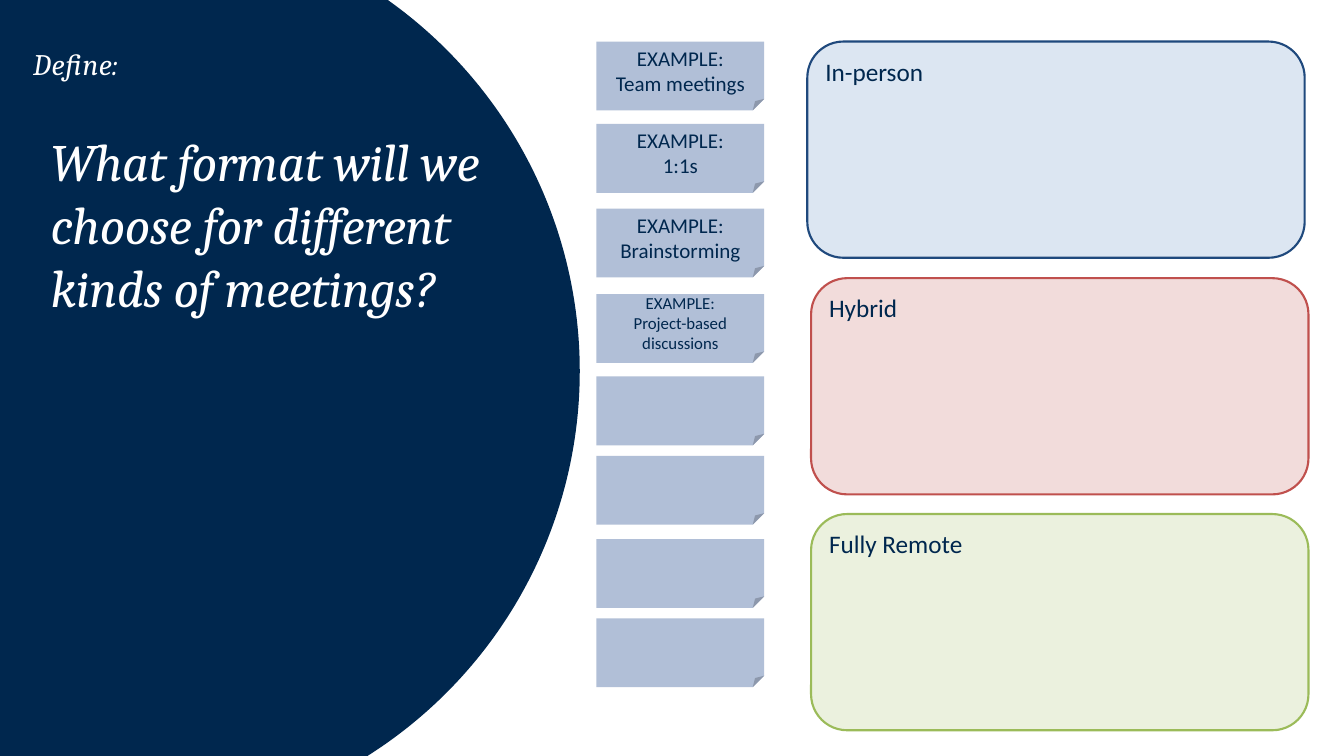
from dataclasses import dataclass

from pptx import Presentation
from pptx.dml.color import RGBColor
from pptx.enum.shapes import MSO_SHAPE
from pptx.enum.text import MSO_ANCHOR, MSO_AUTO_SIZE, PP_ALIGN
from pptx.util import Inches, Pt

NOTE_SHAPE = MSO_SHAPE.FOLDED_CORNER
ZONE_SHAPE = MSO_SHAPE.ROUNDED_RECTANGLE
CIRCLE_SHAPE = MSO_SHAPE.FLOWCHART_CONNECTOR
TOP, MIDDLE = MSO_ANCHOR.TOP, MSO_ANCHOR.MIDDLE
LEFT, CENTER = PP_ALIGN.LEFT, PP_ALIGN.CENTER
FIT_SHAPE = MSO_AUTO_SIZE.SHAPE_TO_FIT_TEXT

NAVY, WHITE, NOTE_BLUE = "00274E", "FFFFFF", "B1BFD7"
SANS, SERIF = "Calibri", "Cambria"
TITLE_ONLY = 5


@dataclass
class Note:
    top: float
    meeting: str = ""
    size: float = 20


@dataclass
class Zone:
    label: str
    left: float
    top: float
    fill: str
    line: str


NOTES = [
    Note(0.55, "Team meetings"),
    Note(1.64, "1:1s"),
    Note(2.76, "Brainstorming"),
    Note(3.89, "Project-based discussions", 16),
    Note(4.98),
    Note(6.03),
    Note(7.13),
    Note(8.18),
]
ZONES = [
    Zone("In-person", 10.68, 0.55, "DCE6F2", "1F497D"),
    Zone("Hybrid", 10.73, 3.68, "F2DCDB", "C0504D"),
    Zone("Fully Remote", 10.73, 6.8, "EBF1DE", "9BBB59"),
]


def color(value: str) -> RGBColor:
    return RGBColor.from_string(value)


def add_span(para, text: str, size: float, font: str, hue: str):
    span = para.add_run()
    span.text = text
    span.font.size = Pt(size)
    span.font.name = font
    span.font.color.rgb = color(hue)
    return span


def add_panel(page, kind, left: float, top: float, width: float, height: float,
              fill: str, line: str = ""):
    panel = page.shapes.add_shape(
        kind, Inches(left), Inches(top), Inches(width), Inches(height))
    panel.shadow.inherit = False
    panel.fill.solid()
    panel.fill.fore_color.rgb = color(fill)
    if line:
        panel.line.color.rgb = color(line)
        panel.line.width = Pt(2)
    else:
        panel.line.fill.background()
    return panel


def add_note(page, note: Note) -> None:
    panel = add_panel(page, NOTE_SHAPE, 7.89, note.top, 2.22, 0.91, NOTE_BLUE)
    if not note.meeting:
        return
    frame = panel.text_frame
    frame.word_wrap = True
    frame.vertical_anchor = MIDDLE
    first, second = frame.paragraphs[0], frame.add_paragraph()
    for para, text in ((first, "EXAMPLE:"), (second, note.meeting)):
        para.alignment = CENTER
        add_span(para, text, note.size, SANS, NAVY)


def add_zone(page, zone: Zone) -> None:
    panel = add_panel(page, ZONE_SHAPE, zone.left, zone.top, 6.58, 2.86,
                      zone.fill, zone.line)
    frame = panel.text_frame
    frame.word_wrap = True
    frame.vertical_anchor = TOP
    para = frame.paragraphs[0]
    para.alignment = LEFT
    add_span(para, zone.label, 24, SANS, NAVY)


def write_heading(box, text: str, size: float, inset: float, spacing: float):
    """Write white italic serif text; spacing is between letters, in points."""
    frame = box.text_frame
    frame.word_wrap = True
    frame.auto_size = FIT_SHAPE
    frame.vertical_anchor = TOP
    frame.margin_left = frame.margin_right = frame.margin_bottom = 0
    frame.margin_top = Inches(inset)
    para = frame.paragraphs[0]
    para.alignment = LEFT
    span = add_span(para, text, size, SERIF, WHITE)
    span.font.italic = True
    span.font._element.set("spc", str(round(spacing * 100)))
    return para


def main() -> None:
    deck = Presentation()
    deck.slide_width, deck.slide_height = Inches(17.78), Inches(10)
    page = deck.slides.add_slide(deck.slide_layouts[TITLE_ONLY])

    # Dark circle running off the left edge
    add_panel(page, CIRCLE_SHAPE, -4.44, -1.12, 12.11, 12.06, NAVY)

    # Step label
    label = page.shapes.add_textbox(
        Inches(0.44), Inches(0.34), Inches(1.83), Inches(0.7))
    para = write_heading(label, "Define:", 28.4, 0.09, 0.5)
    para.line_spacing = Pt(46.6)
    para.space_before = Pt(6.8)

    # Question, brought in front of the circle
    title = page.shapes.title
    title.left, title.top = Inches(0.67), Inches(1.69)
    title.width, title.height = Inches(6.13), Inches(2.54)
    para = write_heading(
        title, "What format will we choose for different kinds of meetings?",
        50, 0.02, -0.3)
    para.space_before, para.space_after = Pt(1.1), Pt(13.3)
    title.element.getparent().append(title.element)

    # Meeting notes and the formats to sort them into
    for note in NOTES:
        add_note(page, note)
    for zone in ZONES:
        add_zone(page, zone)

    deck.save("out.pptx")


if __name__ == "__main__":
    main()
